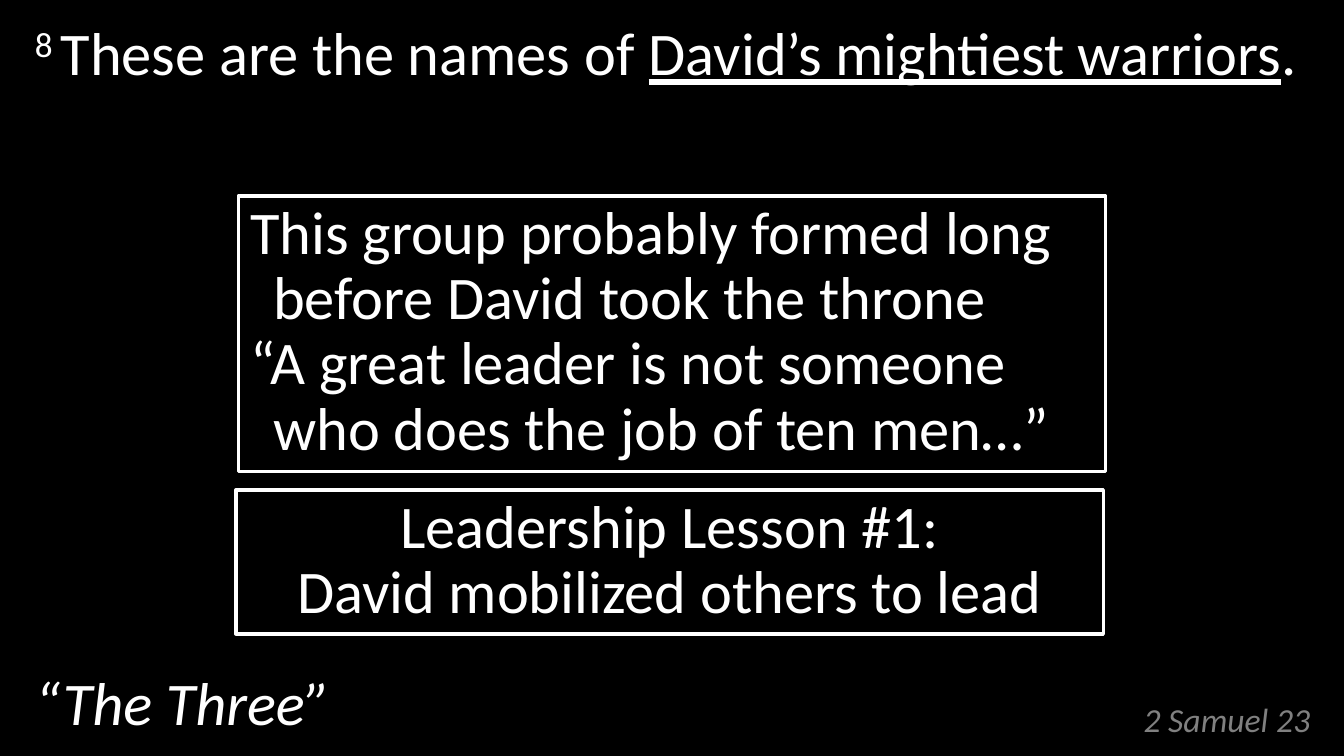
from pptx import Presentation
from pptx.dml.color import RGBColor
from pptx.enum.shapes import MSO_SHAPE as Preset
from pptx.enum.text import MSO_ANCHOR as Anchor, PP_ALIGN as Align
from pptx.util import Inches, Pt

COLORS = {"black": "000000", "white": "FFFFFF", "gray": "808080"}


def color(name):
    return RGBColor.from_string(COLORS[name])


def add_paragraph(frame, runs, first, hang=0, spacing=0.95, align=Align.LEFT):
    """Add (text, font format) runs, with a hanging indent in inches."""
    paragraph = frame.paragraphs[0] if first else frame.add_paragraph()
    paragraph.alignment = align
    paragraph.line_spacing = spacing
    properties = paragraph._p.get_or_add_pPr()
    properties.set("marL", str(Inches(hang)))
    properties.set("indent", str(-Inches(hang)))
    for text, changes in runs:
        font_format = {"name": "Calibri", "size": Pt(36), **changes}
        tint = font_format.pop("color", "white")
        baseline = font_format.pop("baseline", None)
        for index, line in enumerate(text.split("\n")):
            if index:
                paragraph.add_line_break()
            run = paragraph.add_run()
            run.text = line
            run.font.color.rgb = color(tint)
            for name, value in font_format.items():
                setattr(run.font, name, value)
            if baseline:
                run.font._element.set("baseline", baseline)


def add_label(slide, place, runs, anchor=Anchor.BOTTOM, **layout):
    frame = slide.shapes.add_textbox(*map(Inches, place)).text_frame
    frame.word_wrap = True
    frame.vertical_anchor = anchor
    add_paragraph(frame, runs, True, **layout)


def add_framed_note(slide, place, paragraphs, **layout):
    note = slide.shapes.add_shape(Preset.ROUNDED_RECTANGLE, *map(Inches, place))
    note.adjustments[0] = 0
    note.shadow.inherit = False
    note.fill.solid()
    note.fill.fore_color.rgb = color("black")
    note.line.color.rgb = color("white")
    note.line.width = Pt(2)
    frame = note.text_frame
    frame.word_wrap = True
    frame.vertical_anchor = Anchor.TOP
    for index, text in enumerate(paragraphs):
        add_paragraph(frame, [(text, {})], index == 0, spacing=0.9, **layout)


def main():
    deck = Presentation()
    deck.slide_width, deck.slide_height = Inches(11.11), Inches(6.25)
    slide = deck.slides.add_slide(deck.slide_layouts[6])
    slide.background.fill.solid()
    slide.background.fill.fore_color.rgb = color("black")

    add_label(slide, (7.06, 5.56, 3.87, 0.6),
              [("2 Samuel 23", {"size": Pt(20), "italic": True, "color": "gray"})],
              spacing=0.8, align=Align.RIGHT)
    verse = [
        ("8 ", {"baseline": "30000"}),
        ("These are the names of ", {}),
        ("David’s mightiest warriors", {"underline": True}),
        (".", {}),
    ]
    add_label(slide, (0.19, 0.12, 10.74, 5.29), verse, Anchor.TOP, hang=0.38)
    add_label(slide, (0.19, 5.56, 8.12, 0.6),
              [("“The Three”", {"italic": True})], hang=0.38)

    add_framed_note(slide, (1.97, 1.62, 7.17, 2.28), [
        "This group probably formed long before David took the throne",
        "“A great leader is not someone who does the job of ten men…”",
    ], hang=0.19)
    add_framed_note(slide, (1.95, 4.05, 7.17, 1.19),
                    ["Leadership Lesson #1:\nDavid mobilized others to lead"],
                    align=Align.CENTER)
    deck.save("out.pptx")


if __name__ == "__main__":
    main()
